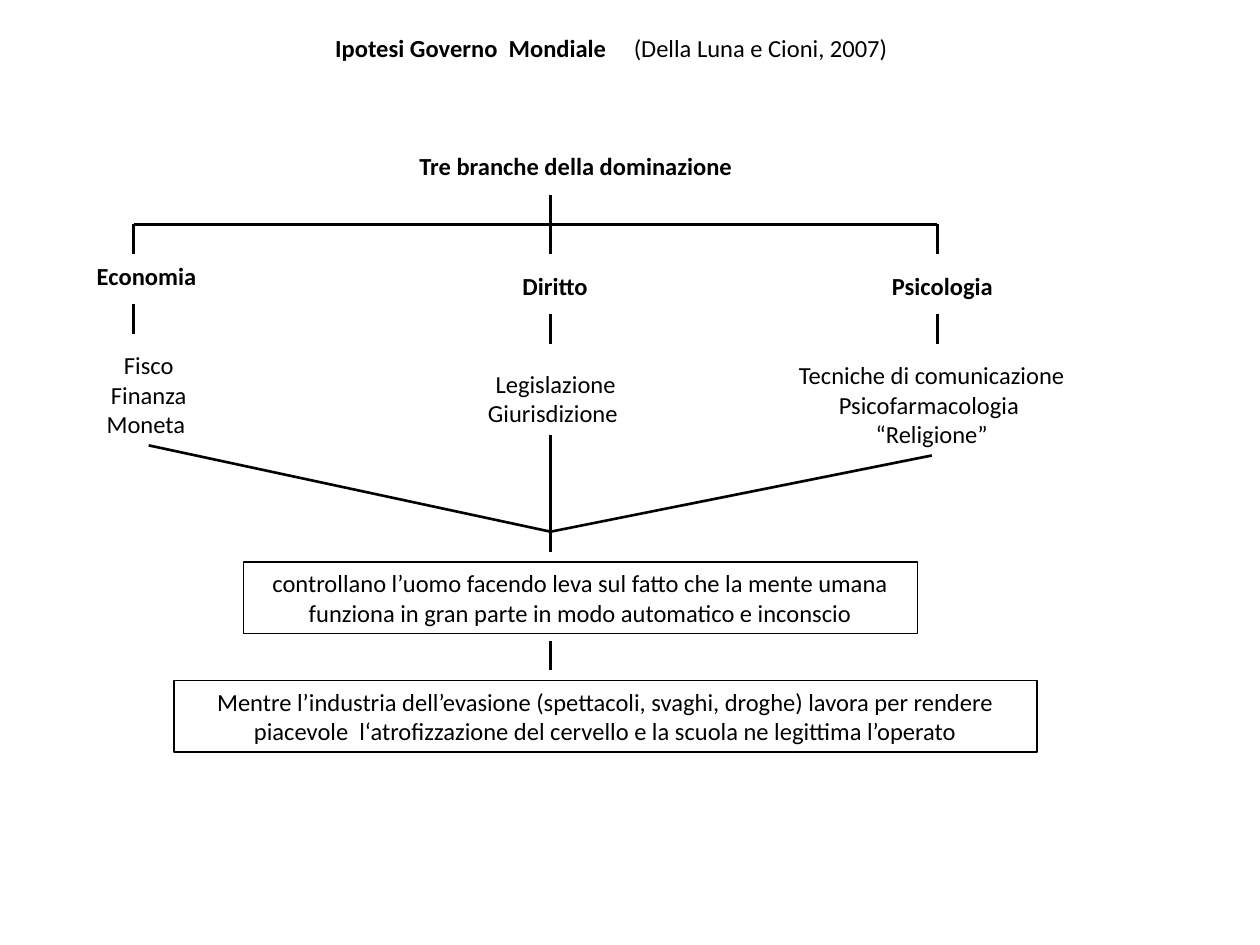
from pptx import Presentation
from pptx import util as u
from pptx.dml.color import RGBColor
from pptx.enum import shapes, text
from pptx.oxml import parse_xml
from pptx.oxml.ns import nsdecls, qn
from lxml import etree

# Grid of 100 columns by 75 rows over the slide
WIDE, HIGH = 10, 7.5
COLS, ROWS = 100, 75
INK = "000000"
LINE = 2.35   # height of one text line, in rows
PAD = 1       # top and bottom inset together, in rows


def color(hexa):
    return RGBColor.from_string(hexa)


def col(n):
    return u.Inches(WIDE * n / COLS)


def row(n):
    return u.Inches(HIGH * n / ROWS)


def tall(lines):
    return PAD + LINE * lines


def add_run(para, words, bold=False):
    run = para.add_run()
    run.text = words
    font = run.font
    font.name, font.size, font.bold = "Calibri", u.Pt(14), bold
    font.color.rgb = color(INK)


def fill_text(shape, lines, bold=False):
    frame = shape.text_frame
    frame.word_wrap = True
    frame.vertical_anchor = text.MSO_ANCHOR.TOP
    for i, words in enumerate(lines):
        para = frame.paragraphs[0] if i == 0 else frame.add_paragraph()
        para.alignment = text.PP_ALIGN.CENTER
        add_run(para, words, bold)


def label(slide, x, y, w, lines, bold=False):
    shape = slide.shapes.add_textbox(col(x), row(y), col(w), row(tall(len(lines))))
    fill_text(shape, lines, bold)


def panel(slide, x, y, w, words):
    shape = slide.shapes.add_shape(
        shapes.MSO_SHAPE.RECTANGLE, col(x), row(y), col(w), row(tall(2)))
    shape.shadow.inherit = False
    shape.fill.background()
    shape.line.color.rgb = color(INK)
    shape.line.width = u.Pt(0.75)
    fill_text(shape, [words])


def link(slide, x1, y1, x2, y2):
    line = slide.shapes.add_connector(
        shapes.MSO_CONNECTOR.STRAIGHT, col(x1), row(y1), col(x2), row(y2))
    line.line.color.rgb = color(INK)
    line.line.width = u.Pt(1.5)
    etree.SubElement(line._element.spPr, qn("a:effectLst"))


def heading(slide, box):
    x, y, w, h = box
    title = slide.shapes.title
    title.left, title.top, title.width, title.height = col(x), row(y), col(w), row(h)
    frame = title.text_frame
    frame.auto_size = text.MSO_AUTO_SIZE.NONE
    frame.word_wrap = True
    frame.vertical_anchor = text.MSO_ANCHOR.TOP
    para = frame.paragraphs[0]
    para.alignment = text.PP_ALIGN.LEFT
    # The source note starts at a tab stop
    para._p.get_or_add_pPr().append(parse_xml(
        f'<a:tabLst {nsdecls("a")}><a:tab pos="{col(23.7)}" algn="l"/></a:tabLst>'))
    add_run(para, "Ipotesi Governo  Mondiale\t", True)
    add_run(para, "(Della Luna e Cioni, 2007)")


def branch(slide, stem, rail, head, items, meet):
    """Stem from the rail, bold head, stub, items and closing leg."""
    hx, hy, hw, name = head
    ix, iy, iw, lines = items
    link(slide, stem, rail, stem, rail + 2.4)
    label(slide, hx, hy, hw, [name], True)
    link(slide, stem, hy + 3.9, stem, hy + 6.3)
    label(slide, ix, iy, iw, lines)
    start = stem if stem == meet[0] else ix + iw / 2
    link(slide, start, iy + tall(len(lines)), *meet)


def tree(slide, box):
    x, y, w, h = box
    left, mid, right = x + 7.8, x + 40.9, x + 71.6
    rail, base = y + 6.3, y + h
    label(slide, x + 29.1, y, 27.6, ["Tre branche della dominazione"], True)
    link(slide, mid, y + 4, mid, rail)
    link(slide, left, rail, right, rail)
    join = (mid, base - 1.6)
    branch(slide, left, rail, (x, y + 8.7, 18.1, "Economia "),
           (x + 3.9, y + 15.8, 10.2, ["Fisco", "Finanza", "Moneta "]), join)
    branch(slide, mid, rail, (x + 32.2, y + 9.5, 18.1, "Diritto"),
           (x + 34.6, y + 17.3, 13.4, ["Legislazione", "Giurisdizione "]),
           (mid, base))
    branch(slide, right, rail, (x + 65.3, y + 9.5, 13.4, "Psicologia"),
           (x + w - 29.1, y + 16.6, 29.1,
            ["Tecniche di comunicazione", "Psicofarmacologia ", "“Religione”"]),
           join)


def outcome(slide, box):
    x, y, w, h = box
    panel(slide, x + 5.5, y, 53.5,
          "controllano l’uomo facendo leva sul fatto che la mente umana "
          "funziona in gran parte in modo automatico e inconscio")
    link(slide, x + 29.9, y + 6.3, x + 29.9, y + 8.6)
    panel(slide, x, y + h - tall(2), w,
          "Mentre l’industria dell’evasione (spettacoli, svaghi, droghe) lavora "
          "per rendere piacevole  l‘atrofizzazione del cervello e la scuola ne "
          "legittima l’operato")


def main():
    deck = Presentation()
    deck.slide_width, deck.slide_height = u.Inches(WIDE), u.Inches(HIGH)
    slide = deck.slides.add_slide(deck.slide_layouts[5])
    heading(slide, (25.6, 2.1, 47.2, tall(1)))
    tree(slide, (2.8, 11.5, 85.7, 32.3))
    outcome(slide, (13.8, 44.6, 68.5, 15.1))
    deck.save("out.pptx")


if __name__ == "__main__":
    main()
